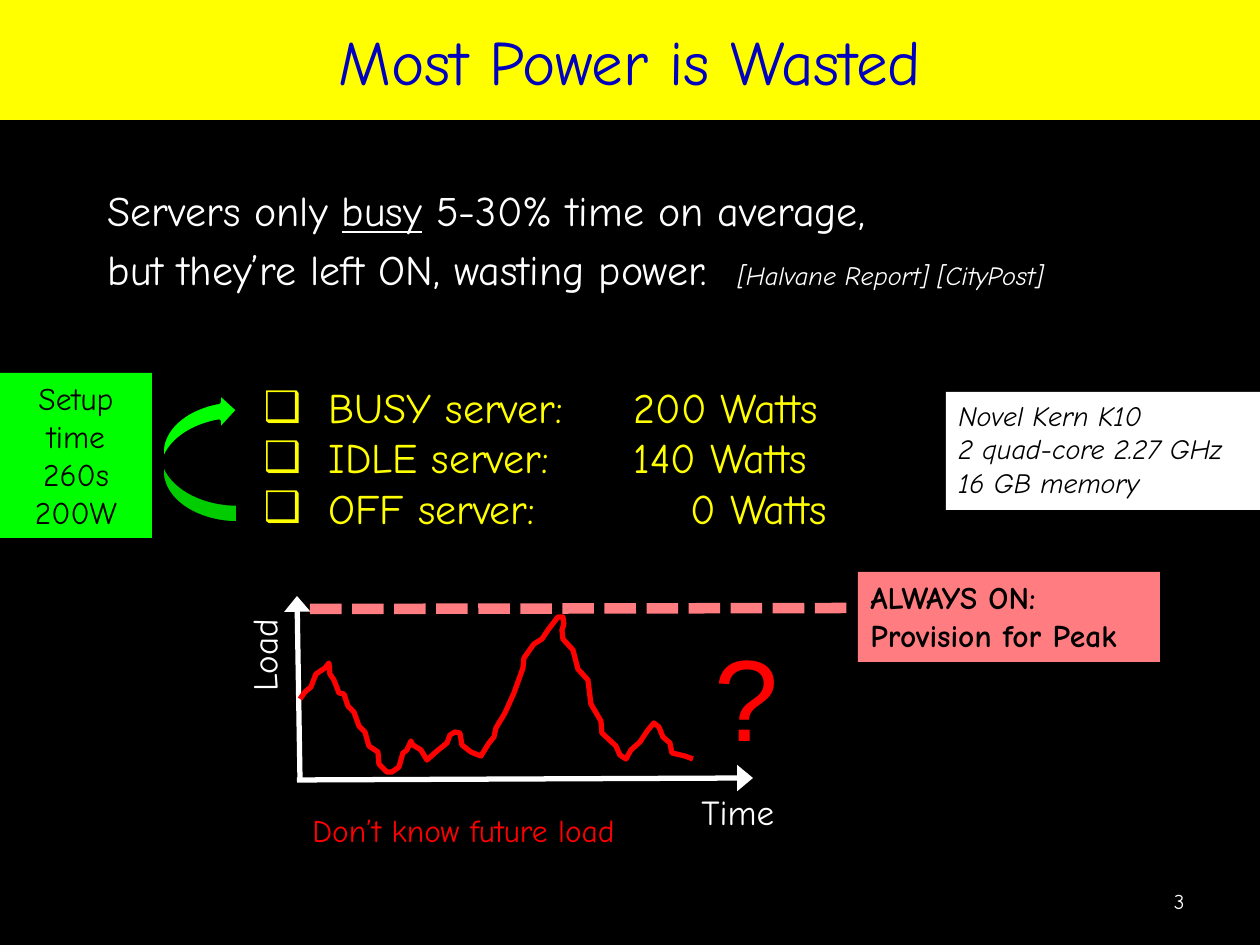
import pptx
import pptx.util
import pptx.dml.color
import pptx.enum.dml
import pptx.enum.shapes
import pptx.enum.text
import pptx.oxml
import pptx.oxml.ns

SCALE = 914400 / 126
FONT = "Comic Neue"
SHAPE = pptx.enum.shapes.MSO_SHAPE
ALIGN = pptx.enum.text.PP_ALIGN
ANCHOR = pptx.enum.text.MSO_ANCHOR
LOAD = [
    (0, 99), (5, 92), (11, 87), (16, 74), (25, 68), (29, 63), (30, 74), (34, 80),
    (39, 93), (44, 94), (48, 106), (54, 112), (59, 126), (65, 132), (69, 146),
    (78, 152), (79, 164), (87, 172), (92, 172), (99, 167), (103, 153), (107, 150),
    (111, 141), (113, 145), (121, 150), (127, 160), (137, 151), (147, 143),
    (150, 135), (155, 132), (160, 133), (162, 145), (171, 152), (181, 156),
    (189, 143), (194, 137), (196, 128), (205, 113), (214, 93), (223, 68),
    (224, 58), (234, 44), (242, 39), (248, 30), (258, 17), (263, 17), (264, 24),
    (262, 30), (263, 39), (273, 50), (278, 69), (288, 80), (291, 104), (301, 121),
    (302, 133), (316, 146), (320, 155), (326, 159), (331, 150), (340, 142),
    (348, 130), (354, 123), (359, 127), (363, 137), (370, 143), (372, 153),
    (385, 156), (393, 159),
]


def px(n):
    return pptx.util.Emu(round(n * SCALE))


def rgb(color):
    return pptx.dml.color.RGBColor.from_string(color)


def xml(text):
    return pptx.oxml.parse_xml(text % pptx.oxml.ns.nsdecls("a"))


def apply(obj, **values):
    for name, value in values.items():
        setattr(obj, name, value)


def place(sp, box):
    apply(sp, **dict(zip(("left", "top", "width", "height"), map(px, box))))


def paint(sp, color, line=None, width=1):
    sp.fill.solid()
    sp.fill.fore_color.rgb = rgb(color)
    if line:
        sp.line.color.rgb = rgb(line)
        sp.line.width = pptx.util.Pt(width)
    else:
        sp.line.fill.background()


def add_run(p, text, size, color, **values):
    r = p.add_run()
    r.text = text
    apply(r.font, **{"name": FONT, "size": pptx.util.Pt(size), **values})
    r.font.color.rgb = rgb(color)


def write(sp, lines, size, color, align=ALIGN.LEFT, anchor=ANCHOR.TOP, wrap=True, **values):
    tf = sp.text_frame
    apply(tf, word_wrap=wrap, vertical_anchor=anchor,
          auto_size=pptx.enum.text.MSO_AUTO_SIZE.NONE)
    for i, line in enumerate(lines):
        p = tf.add_paragraph() if i else tf.paragraphs[0]
        p.alignment = align
        add_run(p, line, size, color, **values)
    return tf


def label(s, box, text, size, color, **values):
    sp = s.shapes.add_textbox(*map(px, box))
    write(sp, [text], size, color, **values)
    return sp


def panel(s, box, color, lines, size, **values):
    sp = s.shapes.add_shape(SHAPE.RECTANGLE, *map(px, box))
    sp.shadow.inherit = False
    paint(sp, color)
    write(sp, lines, size, "000000", **values)


def connect(s, start, end, color, width, arrow=False):
    sp = s.shapes.add_connector(pptx.enum.shapes.MSO_CONNECTOR.STRAIGHT,
                                *map(px, start + end))
    sp.line.color.rgb = rgb(color)
    sp.line.width = pptx.util.Pt(width)
    spPr = sp._element.spPr
    if arrow:
        spPr.find(pptx.oxml.ns.qn("a:ln")).append(
            xml('<a:tailEnd %s type="triangle" w="lg"/>'))
    spPr.append(xml("<a:effectLst %s/>"))
    return sp


def set_list(p, indent, tab, bullet=None):
    pPr = p._p.get_or_add_pPr()
    pPr.set("marL", str(px(indent)))
    pPr.set("indent", str(px(-indent)))
    pPr.append(xml(f'<a:buChar %s char="{bullet}"/>' if bullet else "<a:buNone %s/>"))
    pPr.append(xml(f'<a:tabLst %s><a:tab pos="{px(tab)}" algn="l"/></a:tabLst>'))


def add_title(sp, box):
    place(sp, box)
    paint(sp, "FFFF00")
    write(sp, ["Most Power is Wasted"], 36, "0000BF", ALIGN.CENTER, ANCHOR.MIDDLE)


def add_intro(sp, box):
    place(sp, box)
    tf = write(sp, ["Servers only ", "but they’re left ON, wasting power."], 24, "FFFFFF")
    first, second = tf.paragraphs
    add_run(first, "busy", 24, "FFFFFF", underline=True)
    add_run(first, " 5-30% time on average,", 24, "FFFFFF")
    add_run(second, "\t[Halvane Report] [CityPost]", 15, "FFFFFF", italic=True)
    for p in tf.paragraphs:
        p.space_before = pptx.util.Pt(5)
        set_list(p, 0, 628)


def add_states(sp, box):
    place(sp, box)
    rows = [("BUSY", "200", 370), ("IDLE", "140", 370), ("OFF", "0", 427)]
    lines = [f"{state} server:\t{watts} Watts" for state, watts, _ in rows]
    tf = write(sp, lines, 24, "FFFF00")
    for p, (_, _, tab) in zip(tf.paragraphs, rows):
        p.space_before = pptx.util.Pt(0)
        set_list(p, 65, tab, "❑")


def add_setup(s, box):
    x, y, w, h = box
    panel(s, (x, y, 152, h), "00FF00", ["Setup", "time", "260s", "200W"], 18,
          align=ALIGN.CENTER)
    sp = s.shapes.add_shape(SHAPE.CURVED_LEFT_ARROW,
                            *map(px, (x + w - 76, y + 18, 76, 132)))
    sp.shadow.inherit = False
    sp.rotation = 180
    paint(sp, "00FF00", "000000", 2)


def add_load_chart(s, box):
    x, y, w, h = box
    connect(s, (x - 3, y + h), (x + w, y + h - 2), "FFFFFF", 3, arrow=True)
    connect(s, (x, y + h - 2), (x - 3, y - 4), "FFFFFF", 3, arrow=True)
    points = [(px(x + dx), px(y + dy)) for dx, dy in LOAD]
    builder = s.shapes.build_freeform(*points[0], scale=1.0)
    builder.add_line_segments(points[1:], close=False)
    curve = builder.convert_to_shape()
    curve.shadow.inherit = False
    curve.fill.background()
    curve.line.color.rgb = rgb("FF0000")
    curve.line.width = pptx.util.Pt(3)
    peak = connect(s, (x + 10, y + 9), (x + 550, y + 8), "FF7C80", 6)
    peak.line.dash_style = pptx.enum.dml.MSO_LINE.SQUARE_DOT
    panel(s, (x + 558, y - 28, 302, 90), "FF7C80",
          ["ALWAYS ON:", "Provision for Peak"], 18, wrap=False, bold=True)
    label(s, (x + 402, y + 20, 91, 152), "?", 66, "FF0000", wrap=False, name="Arial")
    label(s, (x, y + 205, 362, 50), "Don’t know future load", 18, "FF0000")
    label(s, (x + 389, y + 184, 106, 55), "Time", 20, "FFFFFF", wrap=False)
    load = label(s, (x - 87, y + 25, 102, 55), "Load", 20, "FFFFFF", wrap=False)
    load.rotation = 270


def main():
    prs = pptx.Presentation()
    apply(prs, slide_width=px(1260), slide_height=px(945))
    s = prs.slides.add_slide(prs.slide_layouts[3])
    s.background.fill.solid()
    s.background.fill.fore_color.rgb = rgb("000000")
    add_title(s.shapes.title, (0, 0, 1260, 120))
    add_intro(s.placeholders[1], (95, 178, 1104, 145))
    add_states(s.placeholders[2], (251, 375, 635, 165))
    add_setup(s, (0, 373, 238, 165))
    panel(s, (946, 392, 314, 118), "FFFFFF",
          ["Novel Kern K10", "2 quad-core 2.27 GHz", "16 GB memory"], 16,
          wrap=False, italic=True)
    add_load_chart(s, (300, 600, 453, 180))
    label(s, (903, 876, 294, 50), "3", 12, "FFFFFF", align=ALIGN.RIGHT, anchor=ANCHOR.MIDDLE)
    prs.save("out.pptx")


if __name__ == "__main__":
    main()
